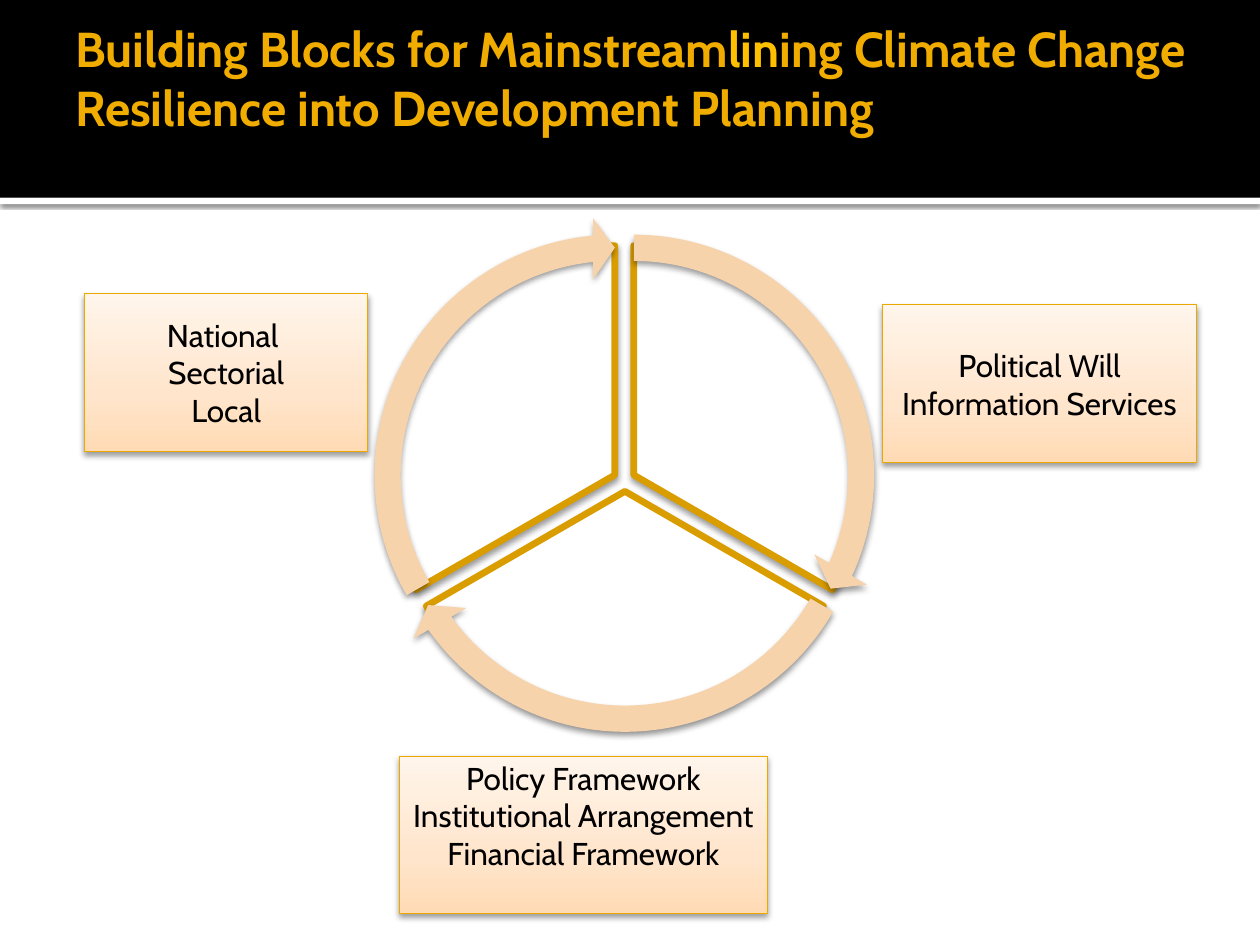
from copy import deepcopy

from lxml.etree import SubElement
from pptx import Presentation
from pptx.dml.color import RGBColor
from pptx.enum.shapes import MSO_SHAPE
from pptx.enum.text import MSO_ANCHOR, PP_ALIGN
from pptx.oxml.ns import qn
from pptx.util import Inches, Pt

FONT = "Cabin"
SOFT_SHADOW = (38, 3.5, 2)
BAND_SHADOW = (60, 2.5, 0.8)
GRADIENT = [(0, "FFDBB5"), (0.35, "FFE5CB"), (1, "FFF5EB")]
PIE_SIZE = 3.64
ARROW_SIZE = 4.09
HEAD_ANGLE = 3.275
SECTORS = [
    (5.03, 3.77, 162, 18),
    (4.96, 3.9, 18, 90),
    (4.88, 3.77, 90, 162),
]
BOXES = [
    (7, 2.42, 2.5, MSO_ANCHOR.MIDDLE, ["Political Will", "Information Services"]),
    (3.17, 6, 2.92, MSO_ANCHOR.TOP,
     ["Policy Framework", "Institutional Arrangement", "Financial Framework"]),
    (0.67, 2.33, 2.25, MSO_ANCHOR.MIDDLE, ["National ", "Sectorial", "Local"]),
]
TITLE = [
    ("Building Blocks for Mainstream", "F0AD00"),
    ("lin", "FFC000"),
    ("ing Climate Change Resilience into Development Planning", "F0AD00"),
]


def rgb(value):
    return RGBColor.from_string(value)


def add_shadow(sp, alpha, blur, distance):
    effects = sp._element.spPr.find(qn("a:effectLst"))
    shadow = SubElement(effects, qn("a:outerShdw"), blurRad=str(Pt(blur)),
                        dist=str(Pt(distance)), dir="5400000", rotWithShape="0")
    color = SubElement(shadow, qn("a:srgbClr"), val="000000")
    SubElement(color, qn("a:alpha"), val=str(alpha * 1000))


def add_shape(s, kind, left, top, width, height, fill=None, line=None, shadow=None):
    sp = s.shapes.add_shape(kind, Inches(left), Inches(top), Inches(width), Inches(height))
    sp.shadow.inherit = False
    if fill:
        sp.fill.solid()
        sp.fill.fore_color.rgb = rgb(fill)
    if line:
        color, weight = line
        sp.line.color.rgb = rgb(color)
        sp.line.width = Pt(weight)
    else:
        sp.line.fill.background()
    if shadow:
        add_shadow(sp, *shadow)
    return sp


def fill_gradient(sp, stops):
    sp.fill.gradient()
    sp.fill.gradient_angle = 90
    stop_list = sp.fill._fill._gradFill.find(qn("a:gsLst"))
    stop_list.append(deepcopy(stop_list[-1]))
    for stop, (position, color) in zip(sp.fill.gradient_stops, stops):
        stop.position = position
        stop.color.rgb = rgb(color)


def add_run(p, text, size, color, bold=False):
    r = p.add_run()
    r.text = text
    r.font.name = FONT
    r.font.size = Pt(size)
    r.font.bold = bold
    r.font.color.rgb = rgb(color)


def add_title(s):
    tf = s.shapes.add_textbox(Inches(0.5), Inches(0.15), Inches(9), Inches(1.37)).text_frame
    tf.word_wrap = True
    tf.margin_top = 0
    tf.margin_right = Inches(0.05)
    for text, color in TITLE:
        add_run(tf.paragraphs[0], text, 28, color, bold=True)


def add_sector(s, x, y, start, end):
    half = PIE_SIZE / 2
    sp = add_shape(s, MSO_SHAPE.PIE, x - half, y - half, PIE_SIZE, PIE_SIZE,
                   "FFFFFF", ("DA9D00", 3.82), SOFT_SHADOW)
    sp.adjustments[0] = start
    sp.adjustments[1] = end


def add_arrow(s, x, y, start, end):
    half = ARROW_SIZE / 2
    sp = add_shape(s, MSO_SHAPE.CIRCULAR_ARROW, x - half, y - half, ARROW_SIZE, ARROW_SIZE,
                   "F6D3AB", shadow=SOFT_SHADOW)
    for i, value in enumerate([0.051, HEAD_ANGLE, end - HEAD_ANGLE, start, 0.059]):
        sp.adjustments[i] = value


def add_box(s, left, top, width, anchor, lines):
    sp = add_shape(s, MSO_SHAPE.RECTANGLE, left, top, width, 1.25,
                   line=("EBA900", 0.5), shadow=SOFT_SHADOW)
    fill_gradient(sp, GRADIENT)
    tf = sp.text_frame
    tf.word_wrap = True
    tf.vertical_anchor = anchor
    tf.margin_top = tf.margin_bottom = Inches(0.02)
    for i, line in enumerate(lines):
        p = tf.add_paragraph() if i else tf.paragraphs[0]
        p.alignment = PP_ALIGN.CENTER
        add_run(p, line, 18, "000000")


def main():
    prs = Presentation()
    prs.slide_width = Inches(10)
    prs.slide_height = Inches(7.5)
    s = prs.slides.add_slide(prs.slide_layouts[6])
    add_shape(s, MSO_SHAPE.RECTANGLE, 0, 1.57, 10, 0.05, "FFFFFF", shadow=BAND_SHADOW)
    add_shape(s, MSO_SHAPE.RECTANGLE, 0, 0, 10, 1.57, "000000")
    add_title(s)
    for sector in SECTORS:
        add_sector(s, *sector)
    for sector in SECTORS:
        add_arrow(s, *sector)
    for box in BOXES:
        add_box(s, *box)
    prs.save("out.pptx")


if __name__ == "__main__":
    main()
